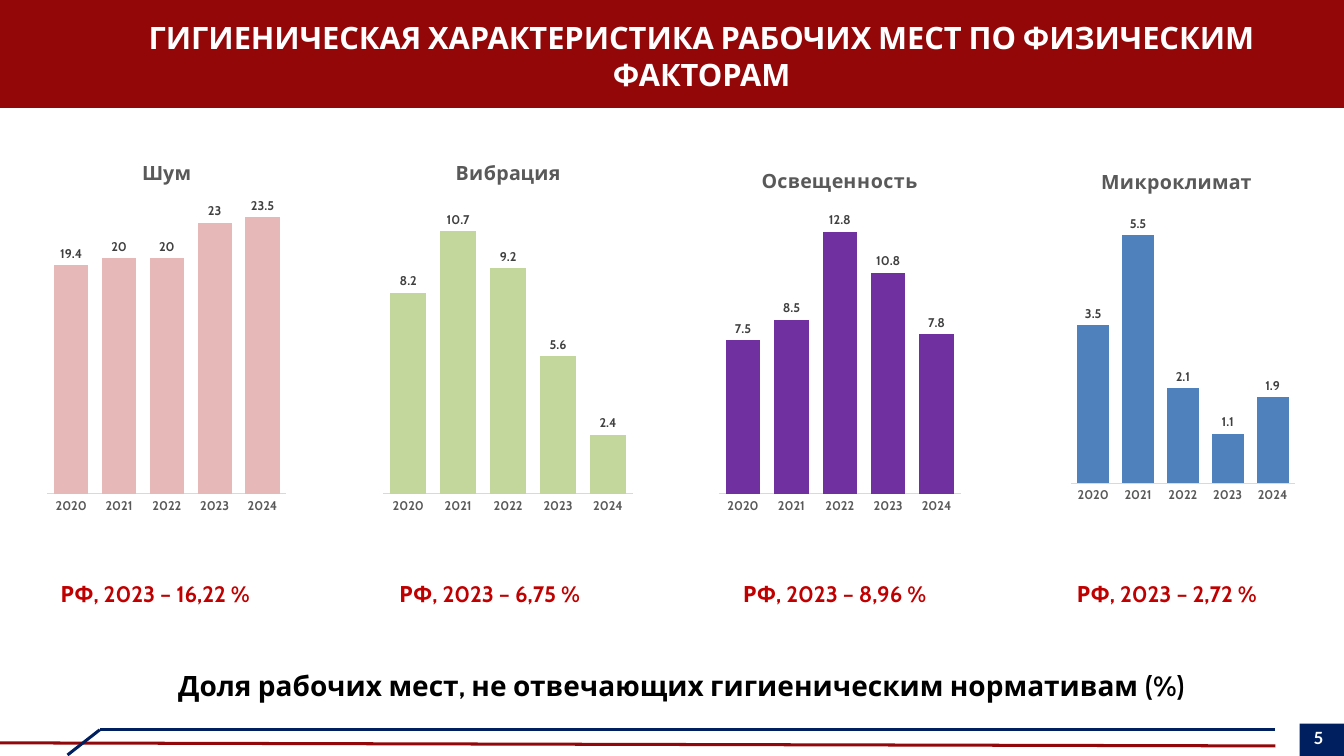
import lxml.etree
import pptx
import pptx.chart.data
import pptx.dml.color
import pptx.enum.chart
import pptx.enum.shapes
import pptx.enum.text
import pptx.oxml.ns
import pptx.oxml.xmlchemy
import pptx.util

Inches = pptx.util.Inches
Pt = pptx.util.Pt
qn = pptx.oxml.ns.qn

COLOURS = {
    "band": "930709", "rule": "920709", "navy": "001F5F", "white": "FFFFFF",
    "black": "000000", "red": "C00000", "grey": "595959", "label": "404040",
    "axis": "D9D9D9", "noise": "E6B9B8", "vibration": "C3D69B",
    "light": "7030A0", "climate": "4F81BD",
}
YEARS = ["2020", "2021", "2022", "2023", "2024"]

# title, colour, box, values, axis maximum, inner plot area
CHARTS = [
    ("Шум", "noise", (0.42, 1.42, 2.47, 3.75), (19.4, 20, 20, 23, 23.5), 25, None),
    ("Вибрация", "vibration", (3.75, 1.42, 2.58, 3.75), (8.2, 10.7, 9.2, 5.6, 2.4), 12, None),
    ("Освещенность", "light", (7.08, 1.5, 2.5, 3.67), (7.5, 8.5, 12.8, 10.8, 7.8), 14, None),
    ("Микроклимат", "climate", (10.42, 1.5, 2.5, 3.83), (3.5, 5.5, 2.1, 1.1, 1.9), 6,
     {"x": 0.08, "y": 0.16, "w": 0.89, "h": 0.7}),
]
NATIONAL_RATES = [(0.5, 2.5, "16,22"), (3.86, 2.48, "6,75"),
                  (7.27, 2.39, "8,96"), (10.58, 2.42, "2,72")]


def colour(name):
    return pptx.dml.color.RGBColor.from_string(COLOURS[name])


class SlideBuilder:
    """Holds the font and the current slide."""

    def __init__(self, slide, font="Cabin"):
        self.slide = slide
        self.font = font

    def style_font(self, font, size, colour_name, name=None):
        font.name = name or self.font
        font.size = Pt(size)
        font.bold = True
        font.color.rgb = colour(colour_name)

    def block(self, box, fill):
        shape = self.slide.shapes.add_shape(
            pptx.enum.shapes.MSO_SHAPE.RECTANGLE, *map(Inches, box))
        shape.shadow.inherit = False
        shape.fill.solid()
        shape.fill.fore_color.rgb = colour(fill)
        shape.line.fill.background()

    def line(self, ends, colour_name):
        connector = self.slide.shapes.add_connector(
            pptx.enum.shapes.MSO_CONNECTOR.STRAIGHT, *map(Inches, ends))
        connector.line.color.rgb = colour(colour_name)
        connector.line.width = Pt(2.16)
        lxml.etree.SubElement(connector._element.spPr, qn("a:effectLst"))

    def text(self, box, words, size, colour_name, centred=False, middle=False,
             margins=(0.1, 0.05, 0.1, 0.05), font=None):
        shape = self.slide.shapes.add_textbox(*map(Inches, box))
        frame = shape.text_frame
        frame.word_wrap = True
        (frame.margin_left, frame.margin_top,
         frame.margin_right, frame.margin_bottom) = map(Inches, margins)
        if middle:
            frame.vertical_anchor = pptx.enum.text.MSO_ANCHOR.MIDDLE
        frame.text = words
        paragraph = frame.paragraphs[0]
        if centred:
            paragraph.alignment = pptx.enum.text.PP_ALIGN.CENTER
        self.style_font(paragraph.runs[0].font, size, colour_name, font)

    def column_chart(self, title, fill, box, values, maximum, plot_area):
        data = pptx.chart.data.CategoryChartData()
        data.categories = YEARS
        data.add_series(title, values)
        chart = self.slide.shapes.add_chart(
            pptx.enum.chart.XL_CHART_TYPE.COLUMN_CLUSTERED,
            *map(Inches, box), data).chart
        chart.font.name = "Calibri"
        chart.font.size = Pt(10)
        chart.has_legend = False
        chart.has_title = True
        chart.chart_title.include_in_layout = False
        chart.chart_title.text_frame.text = title
        run = chart.chart_title.text_frame.paragraphs[0].runs[0]
        self.style_font(run.font, 14, "grey")

        years = chart.category_axis
        years.major_tick_mark = pptx.enum.chart.XL_TICK_MARK.NONE
        years.format.line.color.rgb = colour("axis")
        years.format.line.width = Pt(0.75)
        self.style_font(years.tick_labels.font, 9, "grey")
        scale = chart.value_axis
        scale.minimum_scale = 0
        scale.maximum_scale = maximum
        scale.has_major_gridlines = False
        scale.visible = False

        plot = chart.plots[0]
        plot.gap_width = 40
        plot.overlap = 100
        plot.vary_by_categories = False
        plot.has_data_labels = True
        labels = plot.data_labels
        labels.show_value = True
        labels.position = pptx.enum.chart.XL_LABEL_POSITION.OUTSIDE_END
        self.style_font(labels.font, 9, "label")
        bars = plot.series[0].format.fill
        bars.solid()
        bars.fore_color.rgb = colour(fill)
        if plot_area:
            self.place_plot(chart, plot_area)

    def place_plot(self, chart, fractions):
        """Fix the inner plot area as fractions of the chart."""
        area = chart._chartSpace.find(".//" + qn("c:plotArea"))
        layout = area.find(qn("c:layout"))
        if layout is None:
            layout = pptx.oxml.xmlchemy.OxmlElement("c:layout")
            area.insert(0, layout)
        manual = lxml.etree.SubElement(layout, qn("c:manualLayout"))
        settings = [("layoutTarget", "inner"), ("xMode", "edge"), ("yMode", "edge")]
        for tag, value in settings + list(fractions.items()):
            lxml.etree.SubElement(manual, qn("c:" + tag)).set("val", str(value))


def main():
    presentation = pptx.Presentation()
    presentation.slide_width = Inches(13.33)
    presentation.slide_height = Inches(7.5)
    builder = SlideBuilder(presentation.slides.add_slide(presentation.slide_layouts[6]))

    builder.block((0, 0, 13.33, 1.07), "band")
    builder.line((0, 7.37, 12.65, 7.4), "rule")
    builder.line((0.99, 7.24, 12.65, 7.24), "navy")
    builder.line((0.67, 7.49, 0.99, 7.24), "navy")
    builder.block((12.89, 7.18, 0.44, 0.35), "navy")
    builder.text((13, 7.18, 0.33, 0.22), "5", 12, "white",
                 margins=(0.03, 0.04, 0, 0), font="Lato")
    builder.text((1.21, 0.14, 11.5, 0.82),
                 "ГИГИЕНИЧЕСКАЯ ХАРАКТЕРИСТИКА РАБОЧИХ МЕСТ ПО ФИЗИЧЕСКИМ ФАКТОРАМ",
                 22, "white", centred=True, middle=True, margins=(0.04,) * 4)
    builder.text((0.42, 6.58, 12.67, 0.44),
                 "Доля рабочих мест, не отвечающих гигиеническим нормативам (%)",
                 20, "black", centred=True)
    for left, width, rate in NATIONAL_RATES:
        builder.text((left, 5.71, width, 0.37), f"РФ, 2023 – {rate} %", 16, "red")
    for chart in CHARTS:
        builder.column_chart(*chart)

    presentation.save("out.pptx")


if __name__ == "__main__":
    main()
